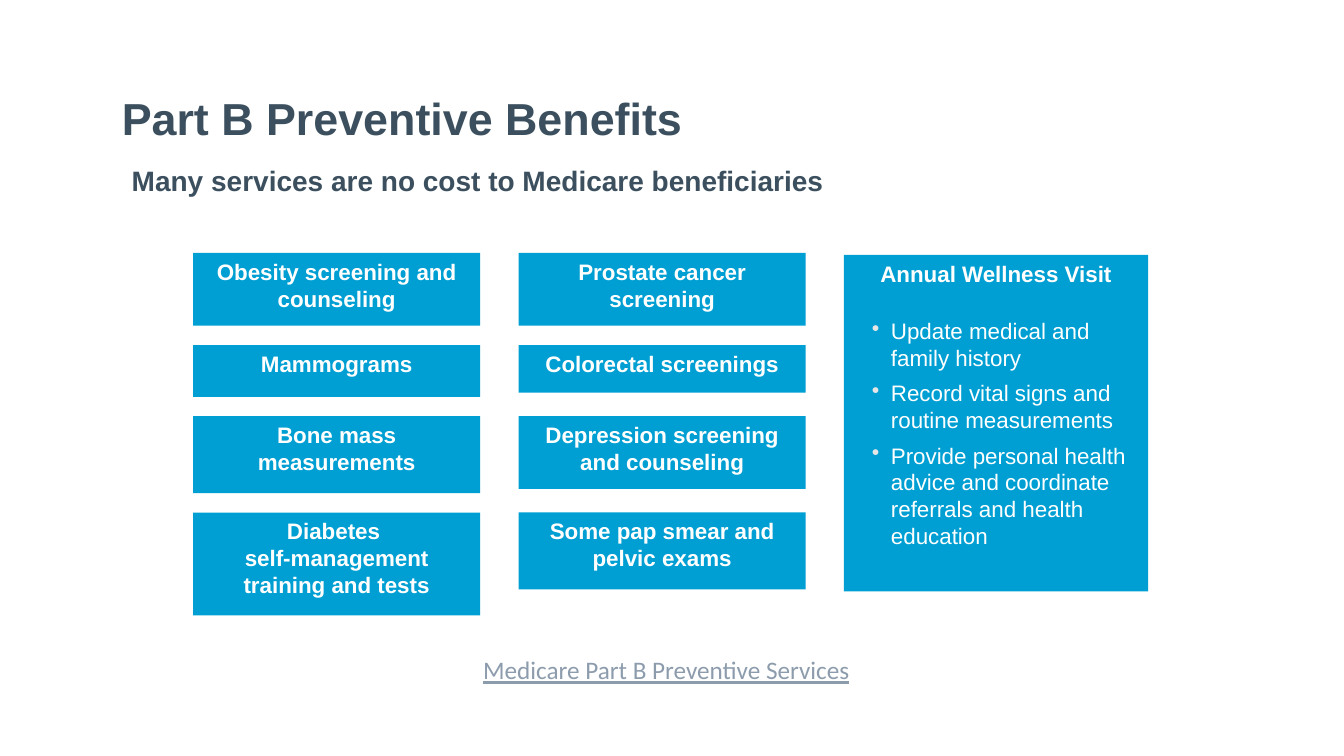
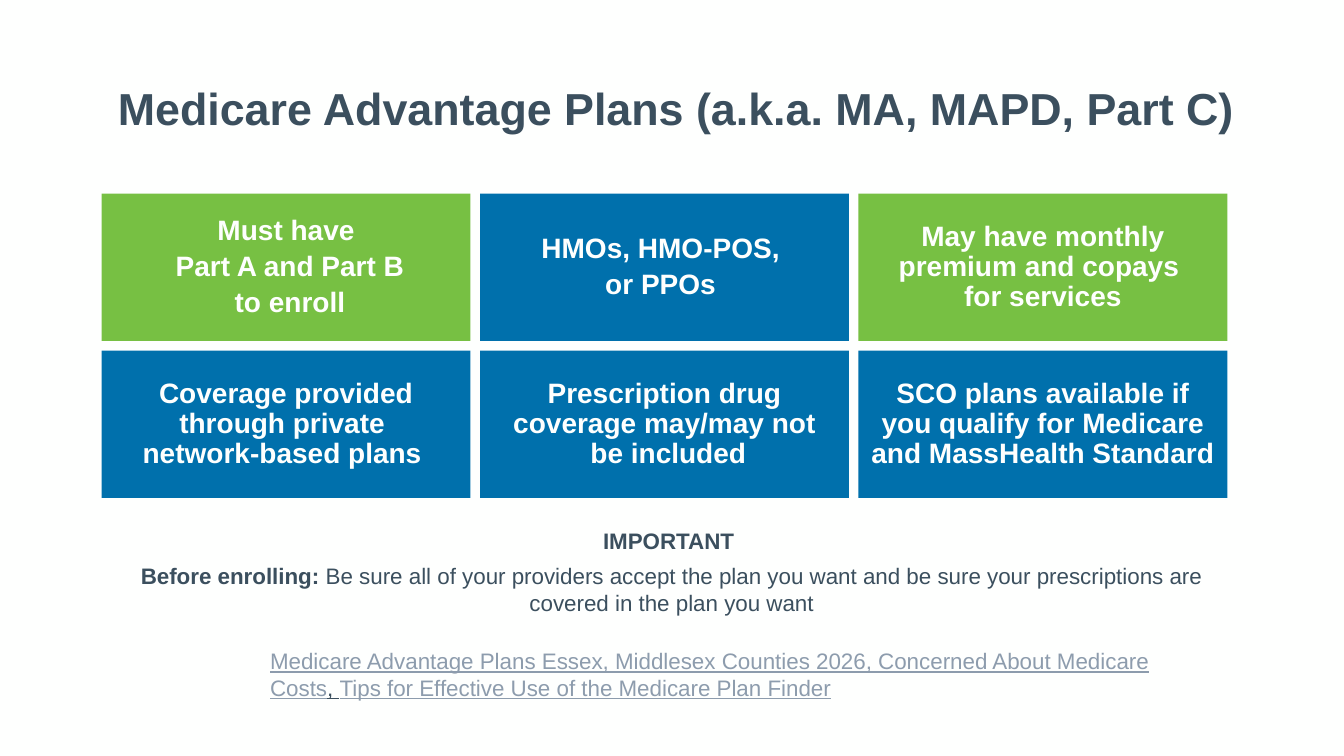
"""Build two slides on Medicare Part B benefits and Medicare Advantage plans."""
from dataclasses import dataclass

from lxml.etree import SubElement
from pptx import Presentation
from pptx.dml.color import RGBColor
from pptx.enum.shapes import MSO_SHAPE as Preset
from pptx.enum.text import MSO_ANCHOR as Anchor, MSO_AUTO_SIZE as AutoSize, PP_ALIGN as Align
from pptx.oxml.ns import qn
from pptx.util import Pt


@dataclass(frozen=True)
class Theme:
    paper: str = "FEFFFE"
    ink: str = "3B4F5E"
    link: str = "8D9CAD"
    sky: str = "009FD3"
    blue: str = "0070AC"
    green: str = "77C043"
    bullet: str = "E7E6E6"
    font: str = "Arial"
    link_font: str = "Calibri"
    title: int = 32
    large: int = 20
    medium: int = 18
    small: int = 16


@dataclass(frozen=True)
class Style:
    size: int
    color: str
    bold: bool = False
    underline: bool = False
    font: str = Theme.font


THEME = Theme()
TITLE = Style(THEME.title, THEME.ink, bold=True)
SUBTITLE = Style(THEME.large, THEME.ink, bold=True)
SERVICE = Style(THEME.small, THEME.paper, bold=True)
VISIT = Style(THEME.small, THEME.paper)
TILE = Style(THEME.large, THEME.paper, bold=True)
STRONG = Style(THEME.small, THEME.ink, bold=True)
NOTE = Style(THEME.small, THEME.ink)
LINK = Style(THEME.small, THEME.link, underline=True)
COMMA = Style(THEME.small, THEME.ink, underline=True)
SINGLE_LINK = Style(THEME.medium, THEME.link, underline=True, font=THEME.link_font)

BENEFITS_TITLE = "Part B Preventive Benefits"
BENEFITS_SUBTITLE = "Many services are no cost to Medicare beneficiaries"
SERVICE_ROWS = [
    (("Obesity screening and counseling", 52), ("Prostate cancer screening", 52)),
    (("Mammograms", 37), ("Colorectal screenings", 34)),
    (("Bone mass measurements", 55), ("Depression screening and counseling", 52)),
    (("Diabetes \nself-management training and tests", 73.5), ("Some pap smear and pelvic exams", 55)),
]
VISIT_TITLE = "Annual Wellness Visit"
VISIT_ITEMS = [
    "Update medical and family history",
    "Record vital signs and routine measurements",
    "Provide personal health advice and coordinate referrals and health education",
]
BENEFITS_LINK = "Medicare Part B Preventive Services"

PLANS_TITLE = "Medicare Advantage Plans (a.k.a. MA, MAPD, Part C)"
PLAN_ROWS = [
    [
        (THEME.green, ["Must have", " Part A and Part B", " to enroll"]),
        (THEME.blue, ["HMOs, HMO-POS, ", "or PPOs "]),
        (THEME.green, ["May have monthly premium and copays \nfor services"]),
    ],
    [
        (THEME.blue, ["Coverage provided through private \nnetwork-based plans "]),
        (THEME.blue, ["Prescription drug coverage may/may not\n be included"]),
        (THEME.blue, ["SCO plans available if you qualify for Medicare and MassHealth Standard"]),
    ],
]
ENROLL_NOTE = [
    [("IMPORTANT ", STRONG)],
    [
        ("Before enrolling: ", STRONG),
        ("Be sure all of your providers accept the plan you want and be sure "
         "your prescriptions are covered in the plan you want", NOTE),
    ],
]
PLAN_LINKS = [
    ("Medicare Advantage Plans Essex, Middlesex Counties 2026, Concerned About Medicare Costs", LINK),
    (", ", COMMA),
    ("Tips for Effective Use of the Medicare Plan Finder", LINK),
]


def rgb(color):
    """Turn a hex string into a colour."""
    return RGBColor.from_string(color)


def points(*lengths):
    """Turn numbers into point lengths."""
    return [Pt(length) for length in lengths]


def add_para(frame, spans, align=Align.LEFT, spacing=1.0, before=0, after=0, bullet=False):
    """Write one paragraph, run by run, and return it."""
    para = frame.paragraphs[0]
    if para.runs:
        para = frame.add_paragraph()
        para.space_before = Pt(before)
    if bullet:
        props = para._p.get_or_add_pPr()
        props.set("marL", str(Pt(26.6)))
        props.set("indent", str(Pt(-13.7)))
        tint = SubElement(SubElement(props, qn("a:buClr")), qn("a:srgbClr"))
        tint.set("val", THEME.bullet)
        SubElement(props, qn("a:buChar")).set("char", "•")
    para.alignment = align
    para.line_spacing = spacing
    para.space_after = Pt(after)
    for text, style in spans:
        for index, line in enumerate(text.split("\n")):
            if index:
                para.add_line_break()
            span = para.add_run()
            span.text = line
            span.font.name = style.font
            span.font.size = Pt(style.size)
            span.font.bold = style.bold
            span.font.underline = style.underline
            span.font.color.rgb = rgb(style.color)
    return para


def add_page(deck, title, left, top):
    """Add a title-only page with its title placed and styled."""
    page = deck.slides.add_slide(deck.slide_layouts[5])
    box = page.shapes.title
    box.left, box.top, box.width, box.height = points(left, top, 826, 56)
    frame = box.text_frame
    frame.auto_size = AutoSize.NONE
    frame.word_wrap = True
    frame.vertical_anchor = Anchor.BOTTOM
    frame.margin_left = frame.margin_top = frame.margin_right = frame.margin_bottom = 0
    add_para(frame, [(title, TITLE)], spacing=0.9)
    return page


def add_text(page, left, top, width, height):
    """Add a wrapping text box and return its frame."""
    frame = page.shapes.add_textbox(*points(left, top, width, height)).text_frame
    frame.word_wrap = True
    return frame


def add_panel(page, left, top, width, height, color, anchor=Anchor.TOP):
    """Add a flat filled rectangle and return its frame."""
    box = page.shapes.add_shape(Preset.RECTANGLE, *points(left, top, width, height))
    box.shadow.inherit = False
    box.fill.solid()
    box.fill.fore_color.rgb = rgb(color)
    box.line.fill.background()
    frame = box.text_frame
    frame.word_wrap = True
    frame.vertical_anchor = anchor
    return frame


def build_benefits(deck):
    """Build the preventive benefits page."""
    page = add_page(deck, BENEFITS_TITLE, 87, 47.5)
    add_para(add_text(page, 87, 116, 541, 23), [(BENEFITS_SUBTITLE, SUBTITLE)], spacing=0.9)

    top, gap = 180.7, 13.8
    for row in SERVICE_ROWS:
        for column, (service, height) in enumerate(row):
            frame = add_panel(page, 138 + column * 232.5, top, 205, height, THEME.sky)
            add_para(frame, [(service, SERVICE)], Align.CENTER)
        top += max(height for _, height in row) + gap

    frame = add_panel(page, 602.7, 182, 217.5, 240.5, THEME.sky)
    add_para(frame, [(VISIT_TITLE, SERVICE)], Align.CENTER, after=22)
    for item in VISIT_ITEMS:
        add_para(frame, [(item, VISIT)], after=6, bullet=True)

    add_para(add_text(page, 338, 464, 356, 29), [(BENEFITS_LINK, SINGLE_LINK)])


def build_plans(deck):
    """Build the Medicare Advantage page."""
    page = add_page(deck, PLANS_TITLE, 84.2, 40.3)
    width, height, gap = 263.5, 105.2, 6.8
    for row, tiles in enumerate(PLAN_ROWS):
        for column, (color, lines) in enumerate(tiles):
            left = 72.6 + column * (width + gap)
            top = 138.4 + row * (height + gap)
            frame = add_panel(page, left, top, width, height, color, Anchor.MIDDLE)
            for line in lines:
                add_para(frame, [(line, TILE)], Align.CENTER, spacing=0.9, before=4)

    frame = add_text(page, 73, 373, 813.6, 56)
    for spans in ENROLL_NOTE:
        add_para(frame, spans, Align.CENTER, after=6)
    add_para(add_text(page, 185.8, 458.6, 671, 46), PLAN_LINKS)


def main():
    """Build and save the deck."""
    deck = Presentation()
    deck.slide_width, deck.slide_height = points(960, 540)
    backdrop = deck.slide_master.background.fill
    backdrop.solid()
    backdrop.fore_color.rgb = rgb(THEME.paper)
    build_benefits(deck)
    build_plans(deck)
    deck.save("out.pptx")


if __name__ == "__main__":
    main()
